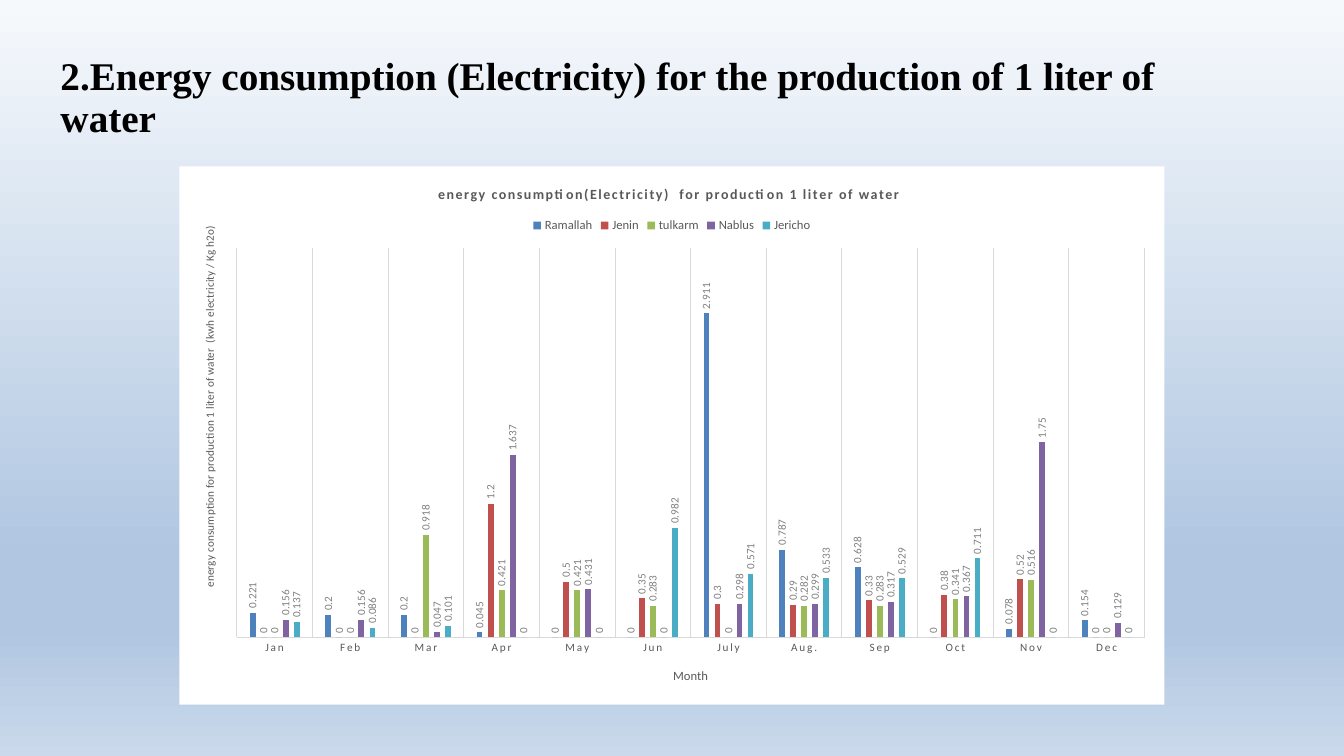
from dataclasses import dataclass

from lxml.etree import SubElement
from pptx import Presentation
from pptx.chart.chart import Chart
from pptx.chart.data import CategoryChartData
from pptx.dml.color import RGBColor
from pptx.enum.chart import XL_CHART_TYPE as ChartType
from pptx.enum.chart import XL_LABEL_POSITION as LabelPos
from pptx.enum.chart import XL_LEGEND_POSITION as LegendPos
from pptx.enum.chart import XL_TICK_MARK as Tick
from pptx.enum.text import MSO_ANCHOR, MSO_AUTO_SIZE, PP_ALIGN
from pptx.oxml import parse_xml
from pptx.oxml.ns import nsdecls, qn
from pptx.util import Inches, Pt

BLACK = RGBColor(0x00, 0x00, 0x00)
WHITE = RGBColor(0xFF, 0xFF, 0xFF)
TEXT_GRAY = RGBColor(0x59, 0x59, 0x59)
LABEL_GRAY = RGBColor(0x80, 0x80, 0x80)
LINE_GRAY = RGBColor(0xD9, 0xD9, 0xD9)
BLUE = RGBColor(0x4F, 0x81, 0xBD)
RED = RGBColor(0xC0, 0x50, 0x4D)
GREEN = RGBColor(0x9B, 0xBB, 0x59)
PURPLE = RGBColor(0x80, 0x64, 0xA2)
TEAL = RGBColor(0x4B, 0xAC, 0xC6)
SKY = [
    (0, RGBColor(0xF6, 0xF9, 0xFC)),
    (74, RGBColor(0xB0, 0xC6, 0xE1)),
    (83, RGBColor(0xB0, 0xC6, 0xE1)),
    (100, RGBColor(0xCA, 0xD9, 0xEB)),
]
WIDTH, HEIGHT = Inches(13.33), Inches(7.5)
UPRIGHT = "-5400000"
MONTHS = ["Jan", "Feb", "Mar", "Apr", "May", "Jun",
          "July", "Aug.", "Sep", "Oct", "Nov", "Dec"]


@dataclass
class City:
    name: str
    color: RGBColor
    values: list[float]


@dataclass
class Caption:
    text: str
    size: float
    x: float
    y: float
    bold: bool = False
    spacing: int = 0
    upright: bool = False


CITIES = [
    City("Ramallah", BLUE,
         [0.221, 0.2, 0.2, 0.045, 0, 0, 2.911, 0.787, 0.628, 0, 0.078, 0.154]),
    City("Jenin", RED,
         [0, 0, 0, 1.2, 0.5, 0.35, 0.3, 0.29, 0.33, 0.38, 0.52, 0]),
    City("tulkarm", GREEN,
         [0, 0, 0.918, 0.421, 0.421, 0.283, 0, 0.282, 0.283, 0.341, 0.516, 0]),
    City("Nablus", PURPLE,
         [0.156, 0.156, 0.047, 1.637, 0.431, 0, 0.298, 0.299, 0.317, 0.367, 1.75, 0.129]),
    City("Jericho", TEAL,
         [0.137, 0.086, 0.101, 0, 0, 0.982, 0.571, 0.533, 0.529, 0.711, 0, 0]),
]
CHART_TITLE = Caption("energy consumption(Electricity)  for production 1 liter of water",
                      10, 26, 3.1, bold=True, spacing=120)
MONTH_TITLE = Caption("Month", 9, 49.9, 92.6)
ENERGY_TITLE = Caption(
    "energy consumption for production 1 liter of water  (kwh electricity / Kg h2o)",
    8, 2.1, 10.7, upright=True)


def share(x: float, y: float, w: float, h: float) -> tuple[int, ...]:
    return tuple(int(side * percent / 100) for side, percent in
                 ((WIDTH, x), (HEIGHT, y), (WIDTH, w), (HEIGHT, h)))


def set_background(s) -> None:
    stops = "".join(f'<a:gs pos="{pos * 1000}"><a:srgbClr val="{color}"/></a:gs>'
                    for pos, color in SKY)
    s.background.fill.solid()
    solid = s._element.find(".//" + qn("p:bgPr"))[0]
    solid.getparent().replace(solid, parse_xml(
        f'<a:gradFill {nsdecls("a")} rotWithShape="1"><a:gsLst>{stops}</a:gsLst>'
        '<a:lin ang="5400000" scaled="0"/></a:gradFill>'))


def set_layout(parent, index: int, inner: bool = False, **percents: float) -> None:
    old = parent.find(qn("c:layout"))
    if old is not None:
        parent.remove(old)
    layout = parse_xml(f'<c:layout {nsdecls("c")}/>')
    manual = SubElement(layout, qn("c:manualLayout"))
    if inner:
        SubElement(manual, qn("c:layoutTarget"), val="inner")
    for key in ("x", "y"):
        SubElement(manual, qn(f"c:{key}Mode"), val="edge")
    for key, percent in percents.items():
        SubElement(manual, qn(f"c:{key}"), val=f"{percent / 100:.4f}")
    parent.insert(index, layout)


def style_font(font, size: float, color: RGBColor, name: str = "Calibri",
               bold: bool = False) -> None:
    font.name, font.size, font.bold = name, Pt(size), bold
    font.color.rgb = color


def turn_upright(body) -> None:
    body.set("rot", UPRIGHT)
    body.set("vert", "horz")


def add_caption(title, caption: Caption) -> None:
    tf = title.text_frame
    r = tf.paragraphs[0].add_run()
    r.text = caption.text
    style_font(r.font, caption.size, TEXT_GRAY, bold=caption.bold)
    r.font._element.set("spc", str(caption.spacing))
    if caption.upright:
        turn_upright(tf._element.find(qn("a:bodyPr")))
    set_layout(title._element, 1, x=caption.x, y=caption.y)


def style_line(line) -> None:
    line.color.rgb = LINE_GRAY
    line.width = Pt(0.75)


def style_axes(chart: Chart) -> None:
    months, energy = chart.category_axis, chart.value_axis
    months.major_tick_mark = months.minor_tick_mark = Tick.NONE
    months.has_major_gridlines = True
    style_line(months.format.line)
    style_line(months.major_gridlines.format.line)
    font = months.tick_labels.font
    style_font(font, 8, TEXT_GRAY)
    font._element.set("spc", "120")
    add_caption(months.axis_title, MONTH_TITLE)
    energy.minimum_scale, energy.maximum_scale = 0, 3.5
    energy.has_major_gridlines = False
    energy.visible = False
    add_caption(energy.axis_title, ENERGY_TITLE)


def style_bars(chart: Chart) -> None:
    plot = chart.plots[0]
    plot.gap_width, plot.overlap, plot.vary_by_categories = 444, -90, False
    for series, city in zip(plot.series, CITIES):
        series.format.fill.solid()
        series.format.fill.fore_color.rgb = city.color
        series.invert_if_negative = False
        labels = series.data_labels
        labels.show_value = True
        labels.position = LabelPos.OUTSIDE_END
        style_font(labels.font, 8, LABEL_GRAY)
        turn_upright(labels._element.find(".//" + qn("a:bodyPr")))


def add_energy_chart(s) -> None:
    data = CategoryChartData()
    data.categories = MONTHS
    for city in CITIES:
        data.add_series(city.name, city.values)
    chart = s.shapes.add_chart(ChartType.COLUMN_CLUSTERED,
                               *share(13.35, 22, 73.28, 71.2), data).chart
    style_font(chart.font, 10, BLACK)
    space = chart._chartSpace
    space.find(qn("c:txPr")).addprevious(parse_xml(
        f'<c:spPr {nsdecls("c", "a")}><a:solidFill><a:srgbClr val="{WHITE}"/></a:solidFill>'
        '<a:ln><a:noFill/></a:ln></c:spPr>'))
    add_caption(chart.chart_title, CHART_TITLE)
    chart.has_legend = True
    legend = chart.legend
    legend.position = LegendPos.TOP
    legend.include_in_layout = False
    style_font(legend.font, 9, TEXT_GRAY)
    set_layout(legend._element, 1, x=35.5, y=9, w=29, h=4)
    set_layout(space.find(".//" + qn("c:plotArea")), 0, inner=True,
               x=5.84, y=15.1, w=92.16, h=72.4)
    style_axes(chart)
    style_bars(chart)


def add_title(s) -> None:
    sp = s.shapes.title
    sp.left, sp.top, sp.width, sp.height = share(3.75, 6.8, 86.25, 14)
    tf = sp.text_frame
    tf.word_wrap, tf.auto_size = True, MSO_AUTO_SIZE.NONE
    tf.vertical_anchor = MSO_ANCHOR.TOP
    p = tf.paragraphs[0]
    p.alignment, p.line_spacing = PP_ALIGN.LEFT, 0.9
    r = p.add_run()
    r.text = "2.Energy consumption (Electricity) for the production of 1 liter of water"
    style_font(r.font, 28, BLACK, "Times New Roman", bold=True)


def main() -> None:
    prs = Presentation()
    prs.slide_width, prs.slide_height = WIDTH, HEIGHT
    s = prs.slides.add_slide(prs.slide_layouts[5])
    set_background(s)
    add_title(s)
    add_energy_chart(s)
    prs.save("out.pptx")


if __name__ == "__main__":
    main()
